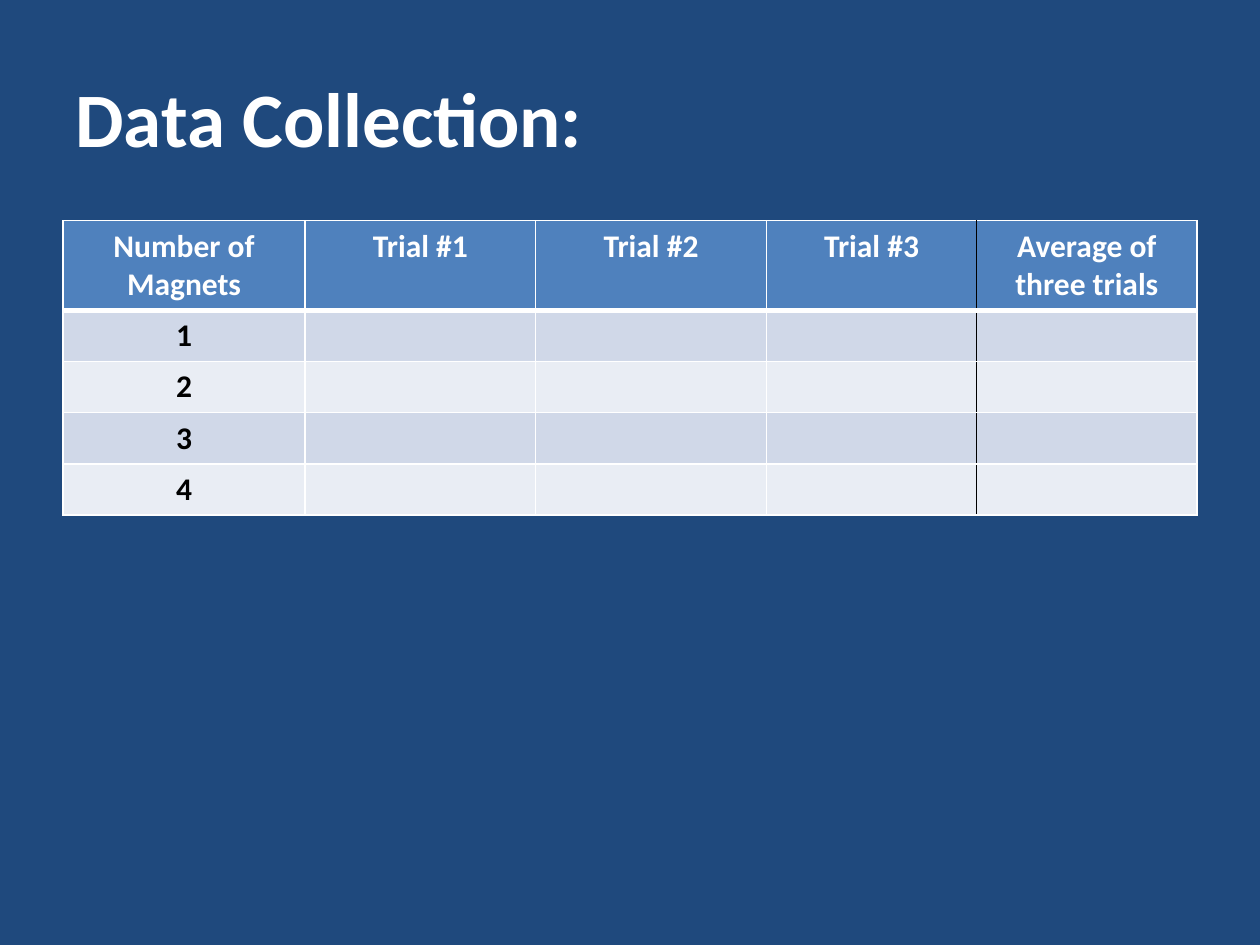
from dataclasses import dataclass

from lxml.etree import SubElement
from pptx import Presentation
from pptx.dml.color import RGBColor
from pptx.enum.text import MSO_ANCHOR, PP_ALIGN
from pptx.oxml.ns import qn
from pptx.util import Cm, Pt


@dataclass(frozen=True)
class Theme:
    font: str = "Calibri"
    title_size: int = 44
    table_size: int = 18
    background: str = "1F497D"
    light: str = "FFFFFF"
    dark: str = "000000"
    header: str = "4F81BD"
    bands: tuple = ("D0D8E8", "E9EDF4")
    thin: int = 1
    thick: int = 3


def write_text(text_frame, text, *, font, size, color, bold=True, align=PP_ALIGN.LEFT):
    paragraph = text_frame.paragraphs[0]
    paragraph.alignment = align
    run = paragraph.add_run()
    run.text = text
    run.font.name = font
    run.font.size = Pt(size)
    run.font.bold = bold
    run.font.color.rgb = RGBColor.from_string(color)


class SlideBuilder:
    def __init__(self, slide, theme):
        self.slide = slide
        self.theme = theme

    def background(self):
        fill = self.slide.background.fill
        fill.solid()
        fill.fore_color.rgb = RGBColor.from_string(self.theme.background)

    def title(self, text, left, top, width, height):
        shape = self.slide.shapes.add_textbox(Cm(left), Cm(top), Cm(width), Cm(height))
        text_frame = shape.text_frame
        text_frame.word_wrap = True
        text_frame.vertical_anchor = MSO_ANCHOR.MIDDLE
        write_text(text_frame, text, font=self.theme.font,
                   size=self.theme.title_size, color=self.theme.light)

    def border(self, cell, side, color, width):
        properties = cell._tc.get_or_add_tcPr()
        line = SubElement(properties, qn(f"a:ln{side}"), w=str(Pt(width)))
        fill = SubElement(line, qn("a:solidFill"))
        SubElement(fill, qn("a:srgbClr"), val=color)

    def cell(self, cell, text, row, column, dark_edge):
        theme = self.theme
        # Borders come before the fill in the cell properties
        edges = {
            "L": (theme.dark if column == dark_edge else theme.light, theme.thin),
            "R": (theme.dark if column + 1 == dark_edge else theme.light, theme.thin),
            "T": (theme.light, theme.thick if row == 1 else theme.thin),
            "B": (theme.light, theme.thick if row == 0 else theme.thin),
        }
        for side, (color, width) in edges.items():
            self.border(cell, side, color, width)
        cell.fill.solid()
        fill_color = theme.header if row == 0 else theme.bands[(row - 1) % 2]
        cell.fill.fore_color.rgb = RGBColor.from_string(fill_color)
        if text:
            write_text(cell.text_frame, text, font=theme.font, size=theme.table_size,
                       color=theme.light if row == 0 else theme.dark,
                       align=PP_ALIGN.CENTER)

    def table(self, rows, left, top, column_widths, row_heights, dark_edge):
        table = self.slide.shapes.add_table(
            len(rows), len(column_widths), Cm(left), Cm(top),
            Cm(sum(column_widths)), Cm(sum(row_heights))).table
        for column, width in zip(table.columns, column_widths):
            column.width = Cm(width)
        for row, height in zip(table.rows, row_heights):
            row.height = Cm(height)
        for row_index, row in enumerate(rows):
            for column_index, text in enumerate(row):
                self.cell(table.cell(row_index, column_index), text,
                          row_index, column_index, dark_edge)


def main():
    presentation = Presentation()
    presentation.slide_width = Cm(25.4)
    presentation.slide_height = Cm(19.05)
    slide = presentation.slides.add_slide(presentation.slide_layouts[6])
    builder = SlideBuilder(slide, Theme())

    # Background and title
    builder.background()
    builder.title("Data Collection:", 1.27, 0.76, 22.86, 3.18)

    # Results table with empty cells for the measurements
    trials = [f"Trial #{number}" for number in range(1, 4)]
    headings = ["Number of Magnets", *trials, "Average of three trials"]
    blanks = [""] * (len(headings) - 1)
    rows = [headings] + [[str(count), *blanks] for count in range(1, 5)]
    builder.table(rows, 1.27, 4.45,
                  column_widths=[4.88, 4.65, 4.65, 4.24, 4.44],
                  row_heights=[1.81] + [1.03] * 4,
                  dark_edge=len(headings) - 1)

    presentation.save("out.pptx")


if __name__ == "__main__":
    main()
